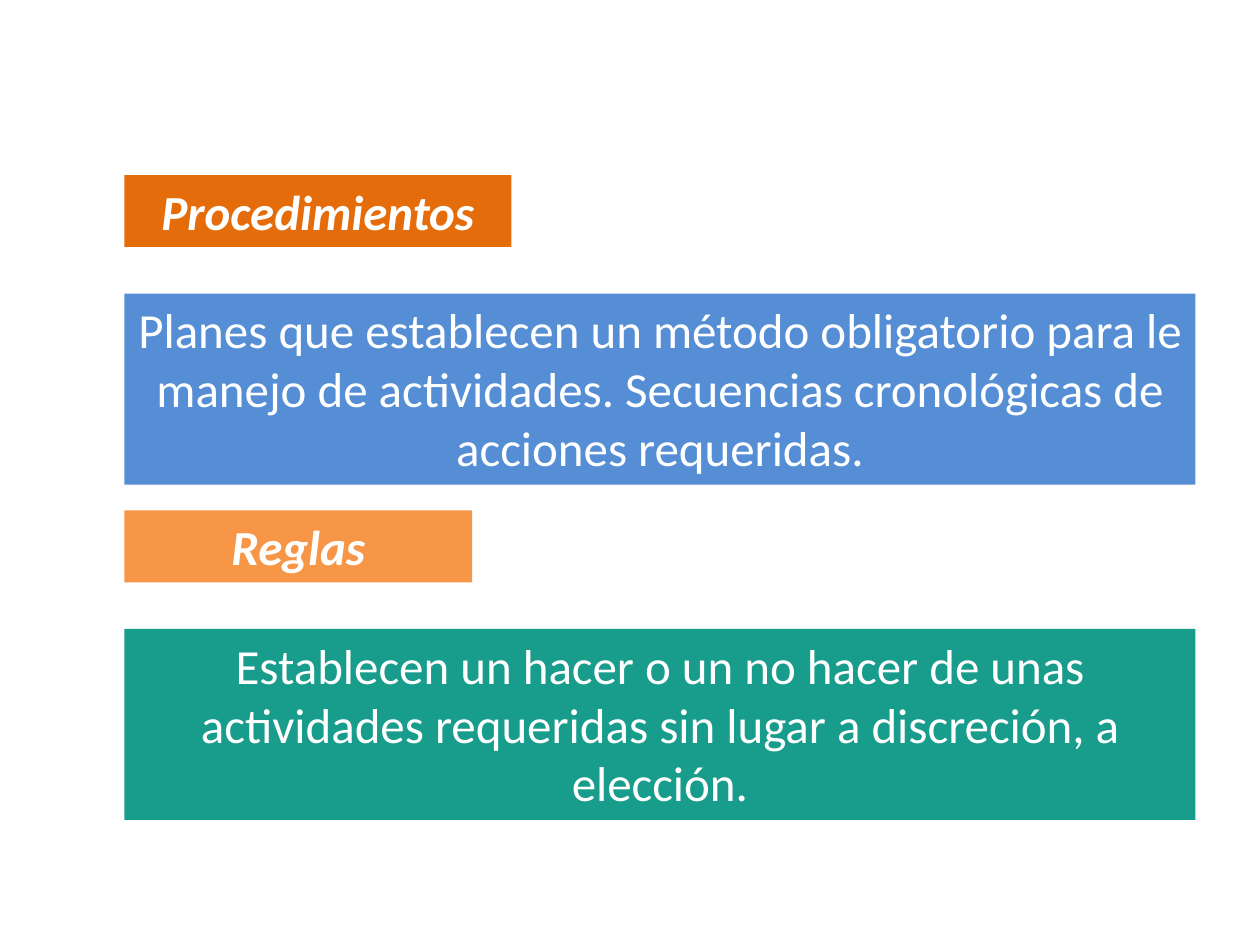
from pptx import Presentation
from pptx import util as u
from pptx.dml.color import RGBColor
from pptx.enum import shapes, text

WHITE = RGBColor(0xFF, 0xFF, 0xFF)
DARK_ORANGE = RGBColor(0xE4, 0x6C, 0x0A)
ORANGE = RGBColor(0xF7, 0x96, 0x46)
BLUE = RGBColor(0x55, 0x8E, 0xD5)
TEAL = RGBColor(0x18, 0x9C, 0x8C)

LEFT = 2.51
FIRST_TOP = 3.53
SECTION_STEP = 6.76
DEFINITION_OFFSET = 2.39
TERM_HEIGHT = 1.45
DEFINITION_WIDTH, DEFINITION_HEIGHT = 21.59, 3.85

SECTIONS = [
    ("Procedimientos", 7.8, DARK_ORANGE,
     "Planes que establecen un método obligatorio para le manejo de "
     "actividades. Secuencias cronológicas de acciones requeridas.", BLUE),
    ("Reglas", 7.01, ORANGE,
     "Establecen un hacer o un no hacer de unas actividades requeridas "
     "sin lugar a discreción, a elección.", TEAL),
]


def write(frame, wording, *, font="Calibri", size=28, color=WHITE,
          bold=False, italic=False, align=text.PP_ALIGN.CENTER):
    frame.word_wrap = True
    paragraph = frame.paragraphs[0]
    paragraph.alignment = align
    run = paragraph.add_run()
    run.text = wording
    run.font.name = font
    run.font.size = u.Pt(size)
    run.font.color.rgb = color
    run.font.bold = bold
    run.font.italic = italic


class Board:
    """Holds the text style and the slide being filled."""

    def __init__(self, slide, font="Calibri", size=28):
        self.slide = slide
        self.style = {"font": font, "size": size}

    def band(self, wording, top, width, height, fill, **text_format):
        """Add a filled rectangle on the left margin; lengths in cm."""
        band = self.slide.shapes.add_shape(
            shapes.MSO_SHAPE.RECTANGLE,
            u.Cm(LEFT), u.Cm(top), u.Cm(width), u.Cm(height))
        band.shadow.inherit = False
        band.fill.solid()
        band.fill.fore_color.rgb = fill
        band.line.fill.background()
        band.text_frame.vertical_anchor = text.MSO_ANCHOR.TOP
        band.text_frame.auto_size = text.MSO_AUTO_SIZE.SHAPE_TO_FIT_TEXT
        write(band.text_frame, wording, **self.style, **text_format)

    def term(self, wording, top, width, fill):
        self.band(wording, top, width, TERM_HEIGHT, fill,
                  bold=True, italic=True)

    def definition(self, wording, top, fill):
        self.band(wording, top, DEFINITION_WIDTH, DEFINITION_HEIGHT, fill)


def main():
    deck = Presentation()
    deck.slide_width, deck.slide_height = u.Cm(25.4), u.Cm(19.05)
    blank_layout = deck.slide_layouts[6]
    board = Board(deck.slides.add_slide(blank_layout))

    for index, (term, width, term_fill, definition, fill) in enumerate(SECTIONS):
        top = FIRST_TOP + index * SECTION_STEP
        board.term(term, top, width, term_fill)
        board.definition(definition, top + DEFINITION_OFFSET, fill)

    deck.save("out.pptx")


if __name__ == "__main__":
    main()
